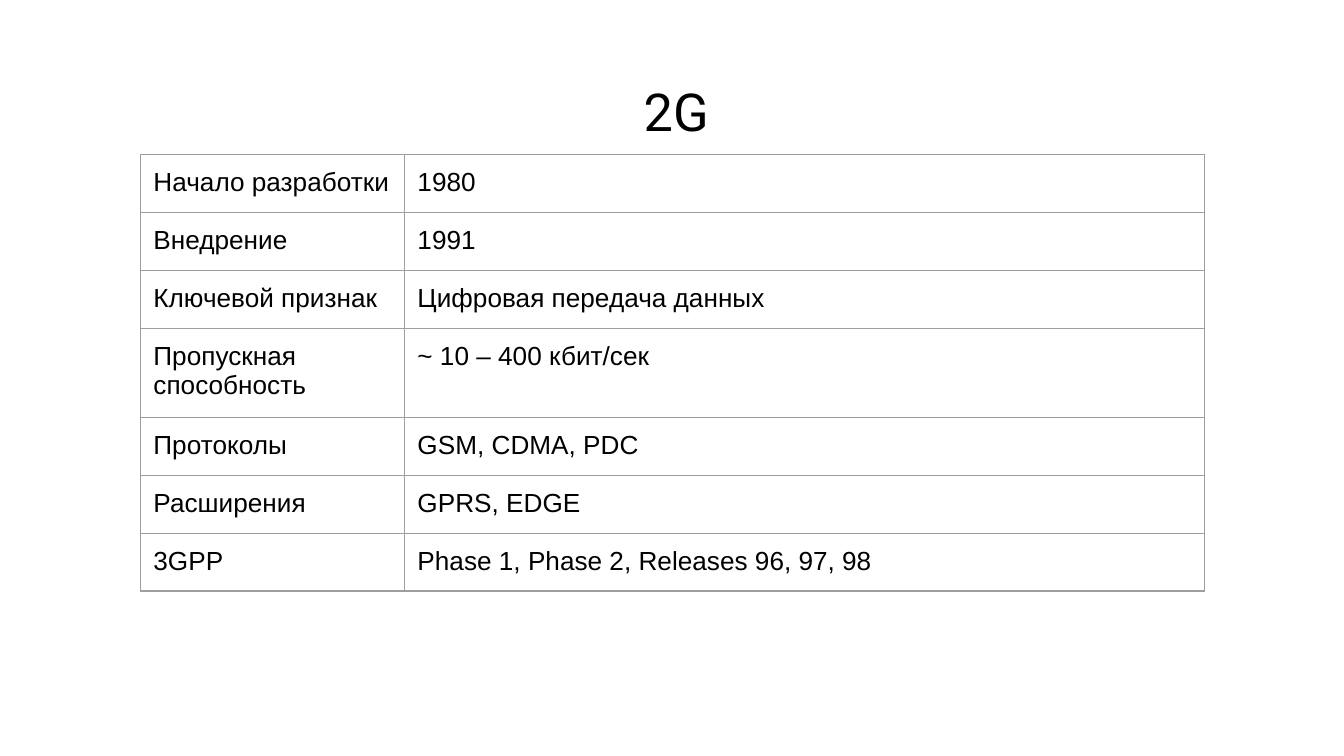
from typing import NamedTuple

from lxml import etree
from pptx import Presentation
from pptx.dml.color import RGBColor
from pptx.enum.text import MSO_ANCHOR, PP_ALIGN
from pptx.oxml.ns import qn
from pptx.util import Cm, Pt

LEFT, CENTER = PP_ALIGN.LEFT, PP_ALIGN.CENTER
TOP = MSO_ANCHOR.TOP

BLACK = "000000"
BORDER_COLOR = "9E9E9E"
BORDER_WIDTH = Pt(0.75)
INSET = Cm(0.25)
COLUMN_WIDTHS = (Cm(4.99), Cm(15.12))
ROW_HEIGHT = Cm(1.06)


class Property(NamedTuple):
    name: str
    value: str


PROPERTIES = (
    Property("Начало разработки", "1980"),
    Property("Внедрение", "1991"),
    Property("Ключевой признак", "Цифровая передача данных"),
    Property("Пропускная способность", "~ 10 – 400 кбит/сек"),
    Property("Протоколы", "GSM, CDMA, PDC"),
    Property("Расширения", "GPRS, EDGE"),
    Property("3GPP", "Phase 1, Phase 2, Releases 96, 97, 98"),
)


def color(value: str) -> RGBColor:
    return RGBColor.from_string(value)


def write_text(text_frame, text: str, *, size: float, font: str = "Arial",
               fill: str = BLACK, align=LEFT) -> None:
    text_frame.word_wrap = True
    paragraph = text_frame.paragraphs[0]
    paragraph.alignment = align
    run = paragraph.add_run()
    run.text = text
    run.font.name = font
    run.font.size = Pt(size)
    run.font.color.rgb = color(fill)


def set_insets(container) -> None:
    """Give a text frame or a table cell equal margins and top anchoring."""
    container.margin_left = container.margin_right = INSET
    container.margin_top = container.margin_bottom = INSET
    container.vertical_anchor = TOP


def set_borders(cell) -> None:
    properties = cell._tc.get_or_add_tcPr()
    for side in ("a:lnL", "a:lnR", "a:lnT", "a:lnB"):
        line = etree.SubElement(properties, qn(side), w=str(BORDER_WIDTH))
        fill = etree.SubElement(line, qn("a:solidFill"))
        etree.SubElement(fill, qn("a:srgbClr"), val=BORDER_COLOR)


def add_title(slide, text: str) -> None:
    title = slide.shapes.add_textbox(Cm(1.02), Cm(1.24), Cm(23.52), Cm(1.6))
    set_insets(title.text_frame)
    write_text(title.text_frame, text, size=28, font="Roboto", align=CENTER)


def add_property_table(slide, properties: tuple[Property, ...]) -> None:
    frame = slide.shapes.add_table(
        len(properties), len(COLUMN_WIDTHS), Cm(2.65), Cm(2.92),
        sum(COLUMN_WIDTHS), ROW_HEIGHT * len(properties))
    table = frame.table
    table.first_row = table.horz_banding = False
    for column, width in zip(table.columns, COLUMN_WIDTHS):
        column.width = width
    for row, entry in zip(table.rows, properties):
        row.height = ROW_HEIGHT
        for cell, text in zip(row.cells, entry):
            set_insets(cell)
            set_borders(cell)
            cell.fill.background()
            write_text(cell.text_frame, text, size=14)


def main() -> None:
    presentation = Presentation()
    presentation.slide_width = Cm(25.4)
    presentation.slide_height = Cm(14.29)
    slide = presentation.slides.add_slide(presentation.slide_layouts[6])
    add_title(slide, "2G")
    add_property_table(slide, PROPERTIES)
    presentation.save("out.pptx")


if __name__ == "__main__":
    main()
